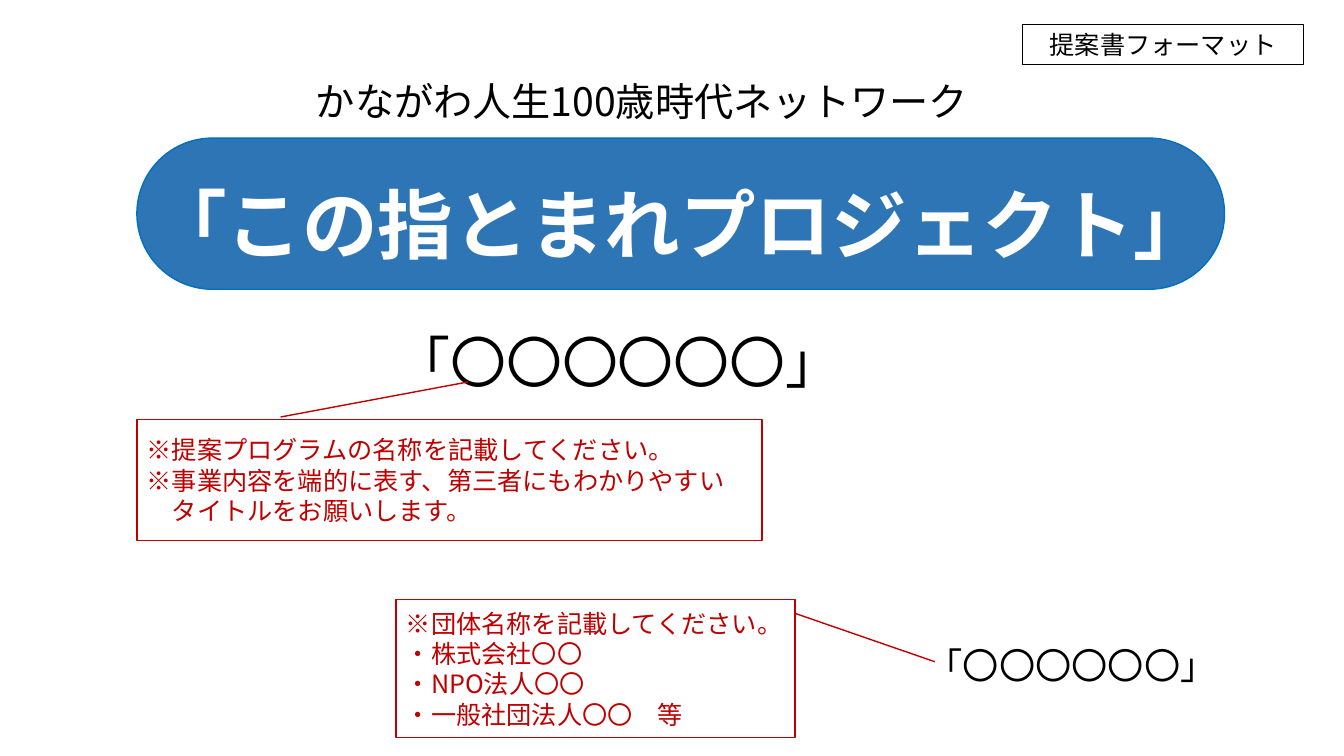
from dataclasses import dataclass

from lxml import etree
from pptx import Presentation
from pptx import util as u
from pptx.dml.color import RGBColor
from pptx.enum import shapes, text
from pptx.oxml.ns import qn


@dataclass(frozen=True)
class Theme:
    font: str = "Noto Sans CJK JP"
    ink: str = "000000"
    paper: str = "FFFFFF"
    banner: str = "2E75B6"
    banner_edge: str = "0070C0"
    note: str = "C00000"
    project_size: float = 54
    program_size: float = 40
    network_size: float = 28
    group_size: float = 25.9
    note_size: float = 18


def write(frame, content, size, color, bold=False, align=text.PP_ALIGN.CENTER,
          anchor=text.MSO_ANCHOR.TOP, line_spacing=None, before=None, font=Theme.font):
    """Fill a text frame, one paragraph for each line of content."""
    frame.word_wrap = True
    frame.vertical_anchor = anchor
    for index, line in enumerate(content.split("\n")):
        para = frame.paragraphs[0] if index == 0 else frame.add_paragraph()
        para.alignment = align
        if line_spacing is not None:
            para.line_spacing = line_spacing
        if before is not None:
            para.space_before = u.Pt(before)
        span = para.add_run()
        span.text = line
        span.font.size = u.Pt(size)
        span.font.bold = bold
        span.font.color.rgb = RGBColor.from_string(color)
        span.font.name = font
        east_asian = etree.SubElement(span.font._element, qn("a:ea"))
        east_asian.set("typeface", font)


class SlideBuilder:
    def __init__(self, slide, theme):
        self.page = slide
        self.theme = theme

    def shape(self, kind, area, edge, fill=None, width=1, adjust=()):
        """Add a preset shape; area is left, top, width, height in cm."""
        box = self.page.shapes.add_shape(kind, *map(u.Cm, area))
        box.shadow.inherit = False
        if fill:
            box.fill.solid()
            box.fill.fore_color.rgb = RGBColor.from_string(fill)
        else:
            box.fill.background()
        box.line.color.rgb = RGBColor.from_string(edge)
        box.line.width = u.Pt(width)
        for index, value in enumerate(adjust):
            box.adjustments[index] = value
        return box

    def heading(self, content, area, size, color=None, **style):
        box = self.page.shapes.add_textbox(*map(u.Cm, area))
        write(box.text_frame, content, size, color or self.theme.ink,
              line_spacing=0.9, **style)

    def tag(self, content, area):
        box = self.shape(shapes.MSO_SHAPE.RECTANGLE, area, self.theme.ink, width=0.75)
        write(box.text_frame, content, self.theme.note_size, self.theme.ink)

    def callout(self, content, area, pointer):
        """Add a bordered note; pointer is y, x of the line's start, then of its end."""
        box = self.shape(shapes.MSO_SHAPE.LINE_CALLOUT_1, area, self.theme.note,
                         fill=self.theme.paper, adjust=pointer)
        write(box.text_frame, content, self.theme.note_size, self.theme.note,
              align=text.PP_ALIGN.LEFT, anchor=text.MSO_ANCHOR.MIDDLE)


def main():
    theme = Theme()
    deck = Presentation()
    deck.slide_width, deck.slide_height = u.Cm(33.87), u.Cm(19.05)
    cover = SlideBuilder(deck.slides.add_slide(deck.slide_layouts[6]), theme)

    cover.shape(shapes.MSO_SHAPE.ROUNDED_RECTANGLE, (3.45, 3.48, 27.41, 3.81),
                theme.banner_edge, fill=theme.banner, adjust=(0.5,))
    cover.heading("かながわ人生100歳時代ネットワーク", (3.05, 1.65, 26.26, 1.63),
                  theme.network_size, anchor=text.MSO_ANCHOR.BOTTOM)
    cover.heading("「この指とまれプロジェクト」", (2.31, 4.62, 29.67, 2.67),
                  theme.project_size, theme.paper, bold=True, before=10)
    blank_name = "「〇〇〇〇〇〇」"
    cover.heading(blank_name, (8.36, 8.31, 14.43, 2.03), theme.program_size, before=10)
    cover.heading(blank_name, (22.96, 16.21, 8.1, 1.27), theme.group_size, before=10)

    cover.tag("提案書フォーマット", (25.78, 0.61, 7.06, 1.02))
    cover.callout("※提案プログラムの名称を記載してください。\n"
                  "※事業内容を端的に表す、第三者にもわかりやすい\n"
                  "　タイトルをお願いします。",
                  (3.45, 10.57, 15.75, 3.05), (-0.02, 0.23, -0.31, 0.53))
    cover.callout("※団体名称を記載してください。\n・株式会社〇〇\n"
                  "・NPO法人〇〇\n・一般社団法人〇〇　等",
                  (9.98, 15.11, 10.06, 3.48), (0.1, 1, 0.45, 1.35))
    deck.save("out.pptx")


if __name__ == "__main__":
    main()
